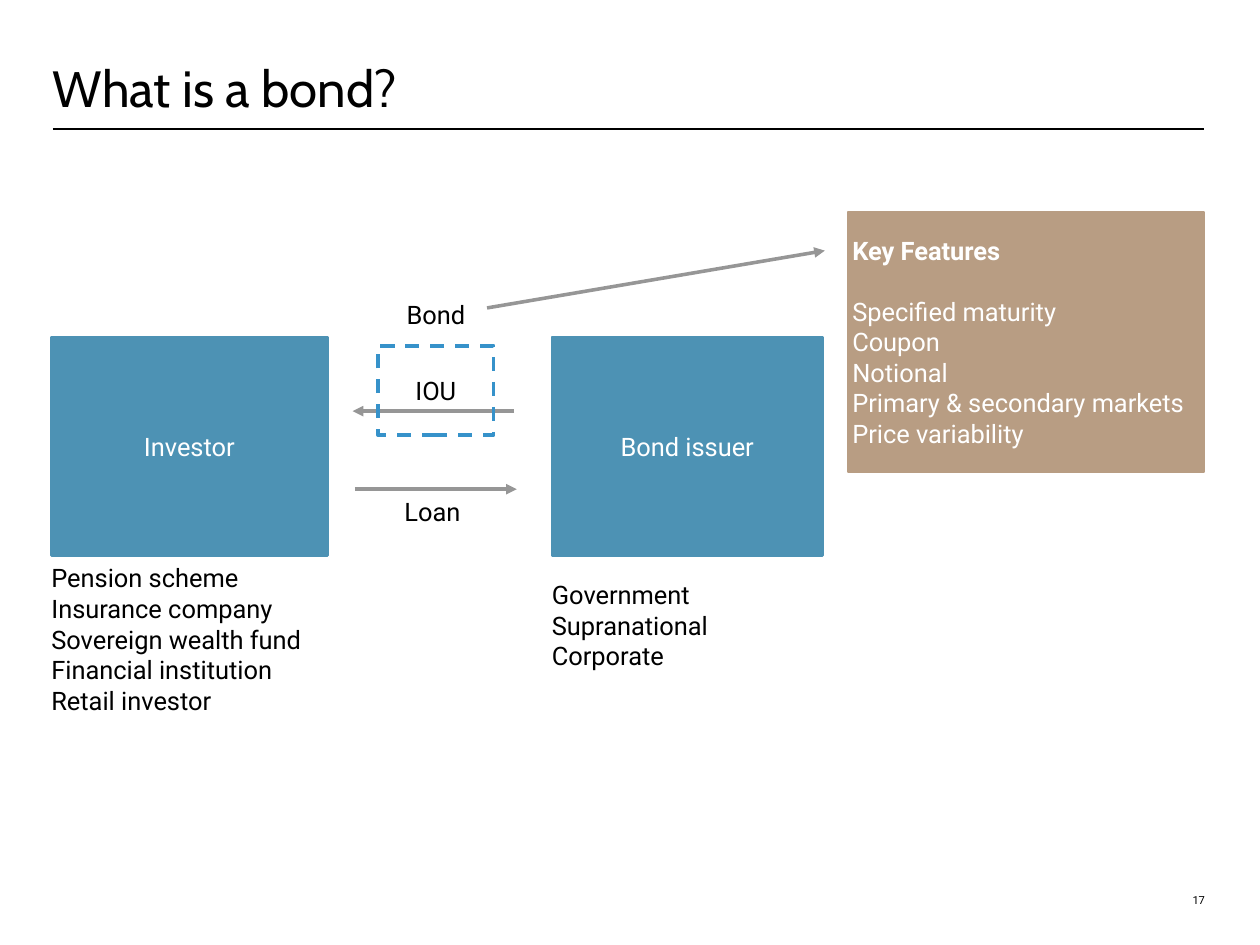
from lxml.etree import SubElement
from pptx import Presentation
from pptx.dml.color import RGBColor
from pptx.enum.dml import MSO_LINE
from pptx.enum.shapes import MSO_CONNECTOR, MSO_SHAPE
from pptx.enum.text import MSO_ANCHOR, PP_ALIGN
from pptx.oxml.ns import qn
from pptx.util import Cm, Pt

BLACK = RGBColor(0x00, 0x00, 0x00)
WHITE = RGBColor(0xFF, 0xFF, 0xFF)
BLUE = RGBColor(0x4D, 0x92, 0xB4)
BRIGHT_BLUE = RGBColor(0x36, 0x92, 0xCA)
SAND = RGBColor(0xB8, 0x9D, 0x83)
GREY = RGBColor(0x96, 0x96, 0x96)

LEFT, RIGHT = 1.17, 26.7
PARTY_TOP, PARTY_HEIGHT = 7.47, 4.85
INVESTOR_LEFT, ISSUER_LEFT = 1.14, 12.24


def write_text(shape, lines, size=16, font="Roboto", color=BLACK, align=PP_ALIGN.LEFT,
               anchor=MSO_ANCHOR.MIDDLE, inset=0, wrap=True, line_spacing=None):
    frame = shape.text_frame
    frame.word_wrap = wrap
    frame.vertical_anchor = anchor
    frame.margin_left = frame.margin_right = Cm(inset)
    frame.margin_top = frame.margin_bottom = Cm(inset)
    frame.text = "\n".join(lines)
    for paragraph in frame.paragraphs:
        paragraph.alignment = align
        paragraph.line_spacing = line_spacing
        for run in paragraph.runs:
            run.font.size = Pt(size)
            run.font.name = font
            run.font.color.rgb = color


def add_text(slide, left, top, width, height, lines, **text_format):
    box = slide.shapes.add_textbox(Cm(left), Cm(top), Cm(width), Cm(height))
    write_text(box, lines, **text_format)


def add_box(slide, left, top, width, height, lines, fill=None, line=None,
            line_width=1.5, dash=None, **text_format):
    shape = slide.shapes.add_shape(MSO_SHAPE.RECTANGLE, Cm(left), Cm(top), Cm(width), Cm(height))
    shape.shadow.inherit = False
    if fill is None:
        shape.fill.background()
    else:
        shape.fill.solid()
        shape.fill.fore_color.rgb = fill
    shape.line.color.rgb = line or fill
    shape.line.width = Pt(line_width)
    shape.line.dash_style = dash
    write_text(shape, lines, **text_format)
    return shape


def add_line(slide, start, end, color=GREY, width=2.25, arrow=True):
    connector = slide.shapes.add_connector(
        MSO_CONNECTOR.STRAIGHT, *(Cm(value) for value in start + end))
    connector.line.color.rgb = color
    connector.line.width = Pt(width)
    if arrow:
        SubElement(connector.line._get_or_add_ln(), qn("a:tailEnd"), type="triangle")
    SubElement(connector._element.spPr, qn("a:effectLst"))


def add_party(slide, left, width, name):
    add_box(slide, left, PARTY_TOP, width, PARTY_HEIGHT, [name], fill=BLUE,
            color=WHITE, align=PP_ALIGN.CENTER, inset=0.1)


def add_key_features(slide):
    features = ["Key Features", "Specified maturity", "Coupon", "Notional",
                "Primary & secondary markets", "Price variability"]
    panel = add_box(slide, 18.8, 4.7, 7.9, 5.77, features, fill=SAND,
                    color=WHITE, inset=0.1, wrap=False)
    heading = panel.text_frame.paragraphs[0]
    heading.runs[0].font.bold = True
    heading.space_after = Pt(19)


def main():
    presentation = Presentation()
    presentation.slide_width, presentation.slide_height = Cm(27.94), Cm(20.96)
    slide = presentation.slides.add_slide(presentation.slide_layouts[6])

    add_text(slide, 25.58, 19.05, 1.14, 1.07, ["17"], size=7,
             align=PP_ALIGN.RIGHT, anchor=MSO_ANCHOR.BOTTOM)
    add_line(slide, (LEFT, 2.87), (RIGHT, 2.87), color=BLACK, width=1.25, arrow=False)
    add_text(slide, LEFT, 0, RIGHT - LEFT, 2.62, ["What is a bond?"], size=32,
             font="Cabin", anchor=MSO_ANCHOR.BOTTOM, line_spacing=Pt(32))

    add_text(slide, INVESTOR_LEFT, 12.47, 6.58, 3.4,
             ["Pension scheme", "Insurance company", "Sovereign wealth fund",
              "Financial institution", "Retail investor"])
    add_key_features(slide)
    add_party(slide, INVESTOR_LEFT, 6.12, "Investor")
    add_party(slide, ISSUER_LEFT, 6, "Bond issuer")
    add_text(slide, ISSUER_LEFT, 12.83, 5.97, 2.06, ["Government Supranational", "Corporate"])

    add_line(slide, (7.87, 10.85), (11.46, 10.85))
    add_line(slide, (11.4, 9.12), (7.82, 9.12))
    add_box(slide, 8.38, 7.67, 2.57, 1.98, ["IOU"], line=BRIGHT_BLUE, line_width=2.25,
            dash=MSO_LINE.DASH, align=PP_ALIGN.CENTER)
    add_text(slide, 8.97, 11, 2.59, 0.69, ["Loan"], anchor=MSO_ANCHOR.TOP)
    add_text(slide, 9.02, 6.63, 2.59, 0.69, ["Bond"], anchor=MSO_ANCHOR.TOP)
    add_line(slide, (10.8, 6.83), (18.29, 5.56))

    presentation.save("out.pptx")


if __name__ == "__main__":
    main()
